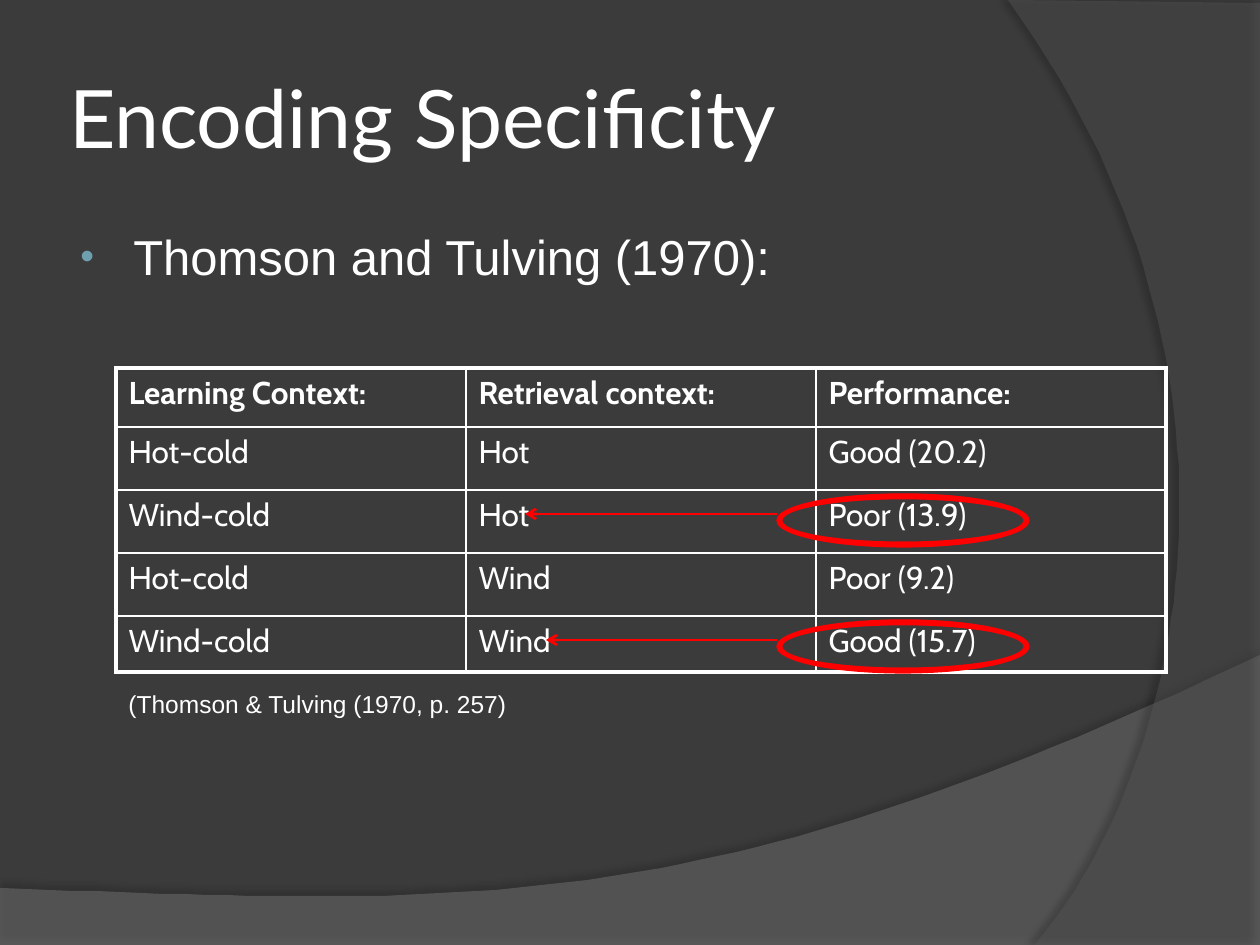
from pptx import Presentation
from pptx.dml.color import RGBColor
from pptx.enum.shapes import MSO_CONNECTOR as Connector, MSO_SHAPE as Shape
from pptx.enum.text import MSO_ANCHOR as Anchor
from pptx.oxml import parse_xml
from pptx.oxml.ns import nsdecls, qn
from pptx.util import Pt

EMU_PER_PX = 914400 / 126
WHITE = RGBColor(0xFF, 0xFF, 0xFF)
RED = RGBColor(0xFF, 0x00, 0x00)
BACKGROUND = RGBColor(0x3B, 0x3B, 0x3B)
WAVE_GRAY = RGBColor(0x7C, 0x7C, 0x7C)
ARC_GRAY = RGBColor(0x59, 0x59, 0x59)
BULLET_BLUE = RGBColor(0x6E, 0xA0, 0xB0)

TITLE = "Encoding Specificity"
STUDY = "Thomson and Tulving (1970):"
CITATION = "(Thomson & Tulving (1970, p. 257)"
RESULTS = [
    ("Learning Context:", "Retrieval context:", "Performance:"),
    ("Hot-cold", "Hot", "Good (20.2)"),
    ("Wind-cold", "Hot", "Poor (13.9)"),
    ("Hot-cold", "Wind", "Poor (9.2)"),
    ("Wind-cold", "Wind", "Good (15.7)"),
]
ROW_HEIGHTS = [59, 63, 63, 63, 56]
COLUMN_WIDTH = 350
TABLE_LEFT, TABLE_TOP = 116, 368
RING_LEFT, RING_WIDTH, RING_HEIGHT = 777, 252, 53
HIGHLIGHTS = [(494, 525), (620, 546)]

WAVE_CURVE = [(1260, 655), (704, 919), (493, 906), (0, 888)]
WAVE_CORNERS = [(0, 946), (1260, 946)]
ARC_CURVE = [(1034, 945), (1178, 780), (1283, 378), (1008, 0)]
ARC_CORNERS = [(1260, 3), (1260, 945)]


def px(length):
    return round(length * EMU_PER_PX)


def add_xml(parent, fragment):
    head, mark, rest = fragment.partition(">")
    slash = "/" if head.endswith("/") else ""
    parent.append(parse_xml(f"{head.rstrip('/')} {nsdecls('a')}{slash}{mark}{rest}"))


def curve_points(curve, steps=60):
    for step in range(steps + 1):
        t = step / steps
        weights = ((1 - t) ** 3, 3 * t * (1 - t) ** 2, 3 * t * t * (1 - t), t ** 3)
        yield tuple(sum(w * point[axis] for w, point in zip(weights, curve)) for axis in (0, 1))


def add_swoosh(page, curve, corners, color, opacity, shadow_opacity, distance, direction):
    start, *others = [*curve_points(curve), *corners]
    builder = page.shapes.build_freeform(*start, scale=EMU_PER_PX)
    builder.add_line_segments(others, close=True)
    swoosh = builder.convert_to_shape()
    swoosh.fill.solid()
    swoosh.fill.fore_color.rgb = color
    swoosh.line.fill.background()
    properties = swoosh.element.spPr
    add_xml(properties.find(qn("a:solidFill"))[0], f'<a:alpha val="{opacity * 1000}"/>')
    add_xml(properties, f'<a:effectLst><a:outerShdw blurRad="{Pt(4)}" dist="{Pt(distance)}" '
            f'dir="{direction * 60000}" algn="ctr" rotWithShape="0"><a:srgbClr val="000000">'
            f'<a:alpha val="{shadow_opacity * 1000}"/></a:srgbClr></a:outerShdw></a:effectLst>')


def style(para, font, size, bold=False):
    for span in para.runs:
        span.font.name = font
        span.font.size = Pt(size)
        span.font.bold = bold
        span.font.color.rgb = WHITE


def space_before(para):
    properties = para._p.get_or_add_pPr()
    add_xml(properties, '<a:spcBef><a:spcPct val="20000"/></a:spcBef>')
    return properties


def add_text(page, text, left, top, width, height, font, size, wrap=True):
    box = page.shapes.add_textbox(px(left), px(top), px(width), px(height))
    frame = box.text_frame
    frame.word_wrap = wrap
    frame.text = text
    style(frame.paragraphs[0], font, size)
    return frame


def add_results(page):
    rows, columns = len(RESULTS), len(RESULTS[0])
    table = page.shapes.add_table(rows, columns, px(TABLE_LEFT), px(TABLE_TOP),
                                  px(COLUMN_WIDTH * columns), px(sum(ROW_HEIGHTS))).table
    table.first_row = table.horz_banding = False
    for column in table.columns:
        column.width = px(COLUMN_WIDTH)
    for r, (height, texts) in enumerate(zip(ROW_HEIGHTS, RESULTS)):
        table.rows[r].height = px(height)
        for c, text in enumerate(texts):
            cell = table.cell(r, c)
            cell.text = text
            para = cell.text_frame.paragraphs[0]
            style(para, "Cabin", 18, bold=r == 0)
            space_before(para)
            outer = {"L": c == 0, "R": c == columns - 1, "T": r == 0, "B": r == rows - 1}
            for side, is_outer in outer.items():
                add_xml(cell._tc.get_or_add_tcPr(),
                        f'<a:ln{side} w="{Pt(2.25 if is_outer else 1)}"><a:solidFill>'
                        f'<a:srgbClr val="{WHITE}"/></a:solidFill></a:ln{side}>')
            cell.fill.background()


def add_ring(page, top):
    ring = page.shapes.add_shape(Shape.DONUT, px(RING_LEFT), px(top), px(RING_WIDTH), px(RING_HEIGHT))
    ring.adjustments[0] = 0.09
    ring.shadow.inherit = False
    ring.fill.solid()
    ring.fill.fore_color.rgb = RED
    ring.line.color.rgb = RED
    ring.line.width = Pt(0.75)


def add_arrow(page, ring_top, tip):
    y = px(ring_top + 20)
    arrow = page.shapes.add_connector(Connector.STRAIGHT, px(RING_LEFT), y, px(tip), y)
    arrow.line.color.rgb = RED
    arrow.line.width = Pt(1.5)
    properties = arrow.element.spPr
    add_xml(properties.find(qn("a:ln")), '<a:tailEnd type="arrow"/>')
    add_xml(properties, "<a:effectLst/>")


def main():
    deck = Presentation()
    deck.slide_width, deck.slide_height = px(1260), px(945)
    page = deck.slides.add_slide(deck.slide_layouts[6])
    page.background.fill.solid()
    page.background.fill.fore_color.rgb = BACKGROUND

    add_swoosh(page, WAVE_CURVE, WAVE_CORNERS, WAVE_GRAY, 45, 35, 3.5, 270)
    add_swoosh(page, ARC_CURVE, ARC_CORNERS, ARC_GRAY, 40, 45, 4, 180)

    title = add_text(page, TITLE, 63, 38, 1029, 157, "Lato", 46)
    title.vertical_anchor = Anchor.MIDDLE
    title.margin_left = title.margin_right = title.margin_top = title.margin_bottom = px(6)

    study = add_text(page, STUDY, 63, 220, 1029, 624, "Arial", 28)
    bullet = space_before(study.paragraphs[0])
    bullet.set("marL", str(px(58)))
    bullet.set("indent", str(px(-53)))
    add_xml(bullet, f'<a:buClr><a:srgbClr val="{BULLET_BLUE}"/></a:buClr>')
    add_xml(bullet, '<a:buSzPct val="80000"/>')
    add_xml(bullet, '<a:buFont typeface="Arial"/>')
    add_xml(bullet, '<a:buChar char="•"/>')

    add_results(page)
    add_text(page, CITATION, 116, 683, 407, 43, "Arial", 14, wrap=False)
    for top, _ in HIGHLIGHTS:
        add_ring(page, top)
    for top, tip in HIGHLIGHTS:
        add_arrow(page, top, tip)
    deck.save("out.pptx")


if __name__ == "__main__":
    main()
